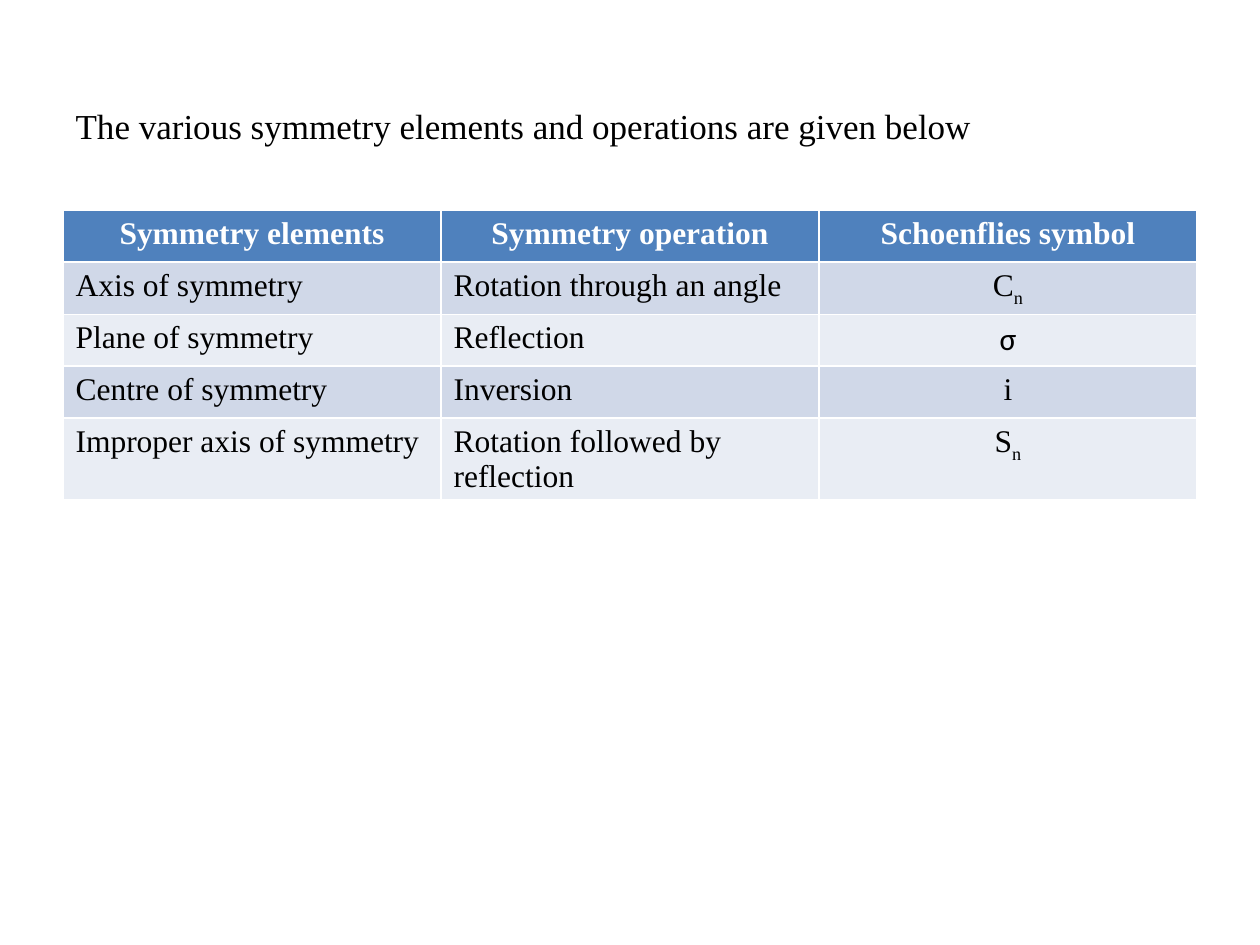
from dataclasses import dataclass

from pptx import Presentation
from pptx.dml.color import RGBColor
from pptx.enum.text import MSO_ANCHOR, PP_ALIGN
from pptx.slide import Slide
from pptx.text.text import TextFrame
from pptx.util import Inches, Pt


@dataclass(frozen=True)
class Theme:
    font: str = "Times New Roman"
    symbol_font: str = "Calibri"
    title_size: int = 20
    table_size: int = 18
    ink: str = "000000"
    header_ink: str = "FFFFFF"
    header_fill: str = "4F81BD"
    bands: tuple[str, str] = ("D0D8E8", "E9EDF4")


@dataclass(frozen=True)
class Symmetry:
    element: str
    operation: str
    symbol: str
    subscript: str = ""
    symbol_font: str = Theme.font


THEME = Theme()
SLIDE_WIDTH, SLIDE_HEIGHT = Inches(10), Inches(7.5)
MARGIN = Inches(0.5)
ROW_HEIGHT = Inches(0.41)
HEADINGS = ("Symmetry elements", "Symmetry operation", "Schoenflies symbol")
SYMMETRIES = (
    Symmetry("Axis of symmetry", "Rotation through an angle", "C", "n"),
    Symmetry("Plane of symmetry", "Reflection", "σ", symbol_font=THEME.symbol_font),
    Symmetry("Centre of symmetry", "Inversion", "i"),
    Symmetry("Improper axis of symmetry", "Rotation followed by reflection", "S", "n"),
)


def write(frame: TextFrame, text: str, *, subscript: str = "", font: str = THEME.font,
          size: int = THEME.table_size, color: str = THEME.ink, bold: bool = False,
          align: PP_ALIGN = PP_ALIGN.LEFT) -> None:
    paragraph = frame.paragraphs[0]
    paragraph.alignment = align
    for part, baseline in ((text, 0), (subscript, -25000)):
        if not part:
            continue
        run = paragraph.add_run()
        run.text = part
        run.font.name = font
        run.font.size = Pt(size)
        run.font.bold = bold
        run.font.color.rgb = RGBColor.from_string(color)
        if baseline:
            run.font._element.set("baseline", str(baseline))


def add_title(slide: Slide, text: str) -> None:
    title = slide.shapes.title
    title.left, title.top = MARGIN, MARGIN
    title.width, title.height = Inches(9.17), Inches(1)
    title.text_frame.vertical_anchor = MSO_ANCHOR.MIDDLE
    write(title.text_frame, text, size=THEME.title_size)


def add_symmetry_table(slide: Slide, symmetries: tuple[Symmetry, ...]) -> None:
    row_count = len(symmetries) + 1
    table = slide.shapes.add_table(
        row_count, len(HEADINGS), MARGIN, Inches(1.67),
        SLIDE_WIDTH - 2 * MARGIN, ROW_HEIGHT * row_count,
    ).table

    for cell, heading in zip(table.rows[0].cells, HEADINGS):
        write(cell.text_frame, heading, color=THEME.header_ink, bold=True,
              align=PP_ALIGN.CENTER)

    for row, symmetry in enumerate(symmetries, start=1):
        element, operation, symbol = table.rows[row].cells
        write(element.text_frame, symmetry.element)
        write(operation.text_frame, symmetry.operation)
        write(symbol.text_frame, symmetry.symbol, subscript=symmetry.subscript,
              font=symmetry.symbol_font, align=PP_ALIGN.CENTER)

    for index, row in enumerate(table.rows):
        fill = THEME.bands[(index - 1) % 2] if index else THEME.header_fill
        for cell in row.cells:
            cell.fill.solid()
            cell.fill.fore_color.rgb = RGBColor.from_string(fill)


def main() -> None:
    presentation = Presentation()
    presentation.slide_width, presentation.slide_height = SLIDE_WIDTH, SLIDE_HEIGHT
    slide = presentation.slides.add_slide(
        presentation.slide_layouts.get_by_name("Title Only"))
    add_title(slide, "The various symmetry elements and operations are given below")
    add_symmetry_table(slide, SYMMETRIES)
    presentation.save("out.pptx")


if __name__ == "__main__":
    main()
